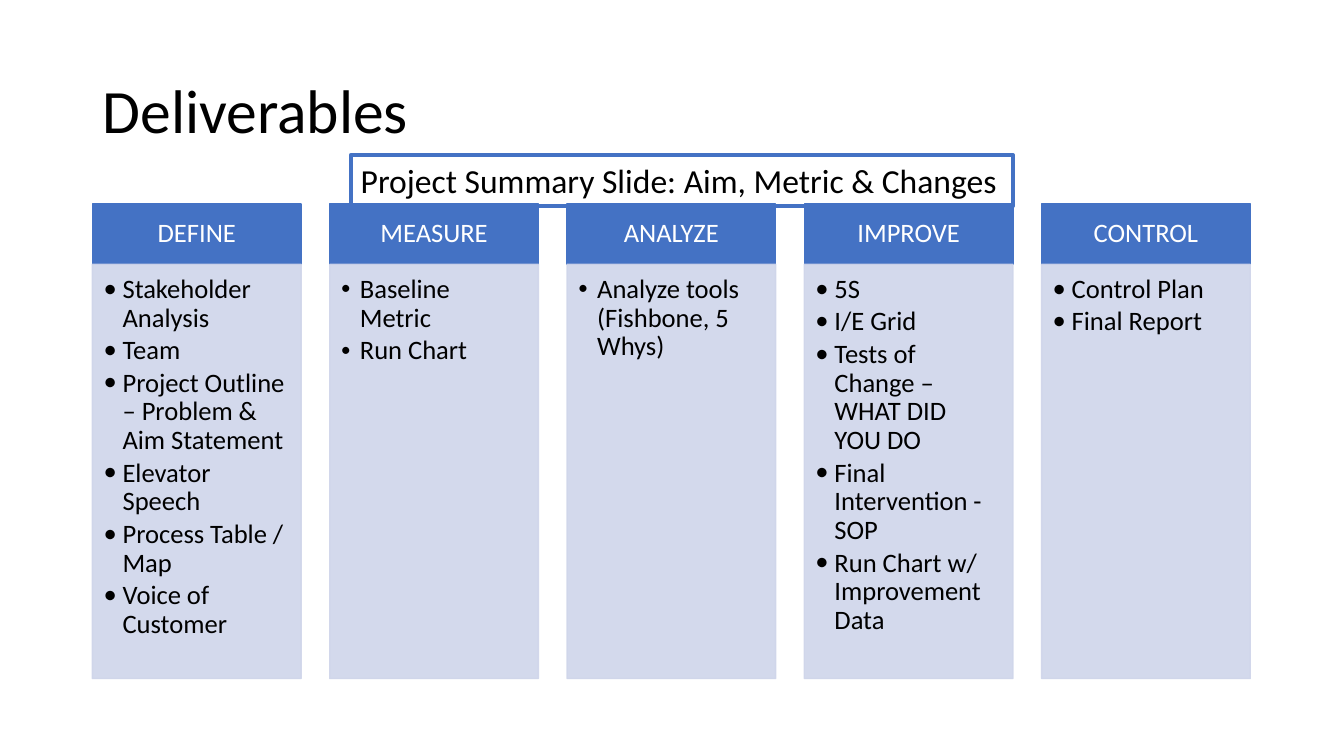
"""Build the Deliverables slide: five project phases under a summary banner."""
from dataclasses import dataclass

from lxml.etree import SubElement
from pptx import Presentation
from pptx.dml.color import RGBColor
from pptx.enum.shapes import MSO_SHAPE
from pptx.enum.text import MSO_ANCHOR, PP_ALIGN
from pptx.oxml.ns import qn
from pptx.util import Cm, Pt


@dataclass(frozen=True)
class Theme:
    font: str = "Calibri"
    blue: RGBColor = RGBColor(0x44, 0x72, 0xC4)
    pale: RGBColor = RGBColor(0xCF, 0xD5, 0xEA)
    black: RGBColor = RGBColor(0, 0, 0)
    white: RGBColor = RGBColor(255, 255, 255)
    title: Pt = Pt(44)
    banner: Pt = Pt(24)
    text: Pt = Pt(19)


theme = Theme()
phases = [
    ("DEFINE", 100, ["Stakeholder Analysis", "Team",
                     "Project Outline – Problem & Aim Statement",
                     "Elevator Speech", "Process Table / Map",
                     "Voice of Customer"]),
    ("MEASURE", 75, ["Baseline Metric", "Run Chart"]),
    ("ANALYZE", 75, ["Analyze tools (Fishbone, 5 Whys)"]),
    ("IMPROVE", 100, ["5S", "I/E Grid", "Tests of Change – WHAT DID YOU DO",
                      "Final Intervention - SOP",
                      "Run Chart w/ Improvement Data"]),
    ("CONTROL", 100, ["Control Plan", "Final Report"]),
]


def write(para, text, size, color, align=PP_ALIGN.LEFT, pitch=0.9):
    para.alignment = align
    para.line_spacing = pitch
    run = para.add_run()
    run.text = text
    run.font.name = theme.font
    run.font.size = size
    run.font.color.rgb = color


def add_box(place, color, weight, pads, anchor=MSO_ANCHOR.TOP):
    box = slide.shapes.add_shape(MSO_SHAPE.RECTANGLE, *map(Cm, place))
    box.shadow.inherit = False
    box.fill.solid()
    box.fill.fore_color.rgb = color
    box.line.color.rgb = color
    box.line.width = Pt(weight)
    frame = box.text_frame
    frame.word_wrap = True
    frame.vertical_anchor = anchor
    frame.margin_left, frame.margin_top, frame.margin_right, frame.margin_bottom = map(Cm, pads)
    return box


deck = Presentation()
deck.slide_width, deck.slide_height = Cm(33.87), Cm(19.05)
slide = deck.slides.add_slide(deck.slide_layouts[5])

title = slide.shapes.title
title.left, title.top, title.width, title.height = map(Cm, (2.33, 1.01, 29.21, 3.68))
title.text_frame.vertical_anchor = MSO_ANCHOR.MIDDLE
write(title.text_frame.paragraphs[0], "Deliverables", theme.title, theme.black)

left, top, width, step = 2.33, 5.14, 5.26, 5.98
head, depth = 1.52, 10.44
for col, (name, mark, items) in enumerate(phases):
    x = left + col * step
    label = add_box((x, top, width, head), theme.blue, 1,
                    (0.38, 0.2, 0.38, 0.2), MSO_ANCHOR.MIDDLE)
    write(label.text_frame.paragraphs[0], name, theme.text, theme.white, PP_ALIGN.CENTER)

    panel = add_box((x, top + head, width, depth), theme.pale, 1,
                    (0.28, 0.28, 0.38, 0.42))
    for tint in panel.element.spPr.iter(qn("a:srgbClr")):
        SubElement(tint, qn("a:alpha"), val="90000")
    frame = panel.text_frame
    for row, item in enumerate(items):
        para = frame.add_paragraph() if row else frame.paragraphs[0]
        para.level = 1
        write(para, item, theme.text, theme.black)
        para.space_after = Pt(2.7)
        props = para._p.get_or_add_pPr()
        props.set("marL", str(Cm(0.48)))
        props.set("indent", str(-Cm(0.48)))
        SubElement(props, qn("a:buSzPct"), val=str(mark * 1000))
        SubElement(props, qn("a:buFont"), typeface=theme.font)
        SubElement(props, qn("a:buChar"), char="•")

banner = add_box((8.84, 3.91, 16.69, 1.28), theme.blue, 3, (0.25, 0.13, 0.25, 0.13))
banner.fill.background()
banner.text_frame.word_wrap = False
write(banner.text_frame.paragraphs[0], "Project Summary Slide: Aim, Metric & Changes",
      theme.banner, theme.black, pitch=1.0)

deck.save("out.pptx")
